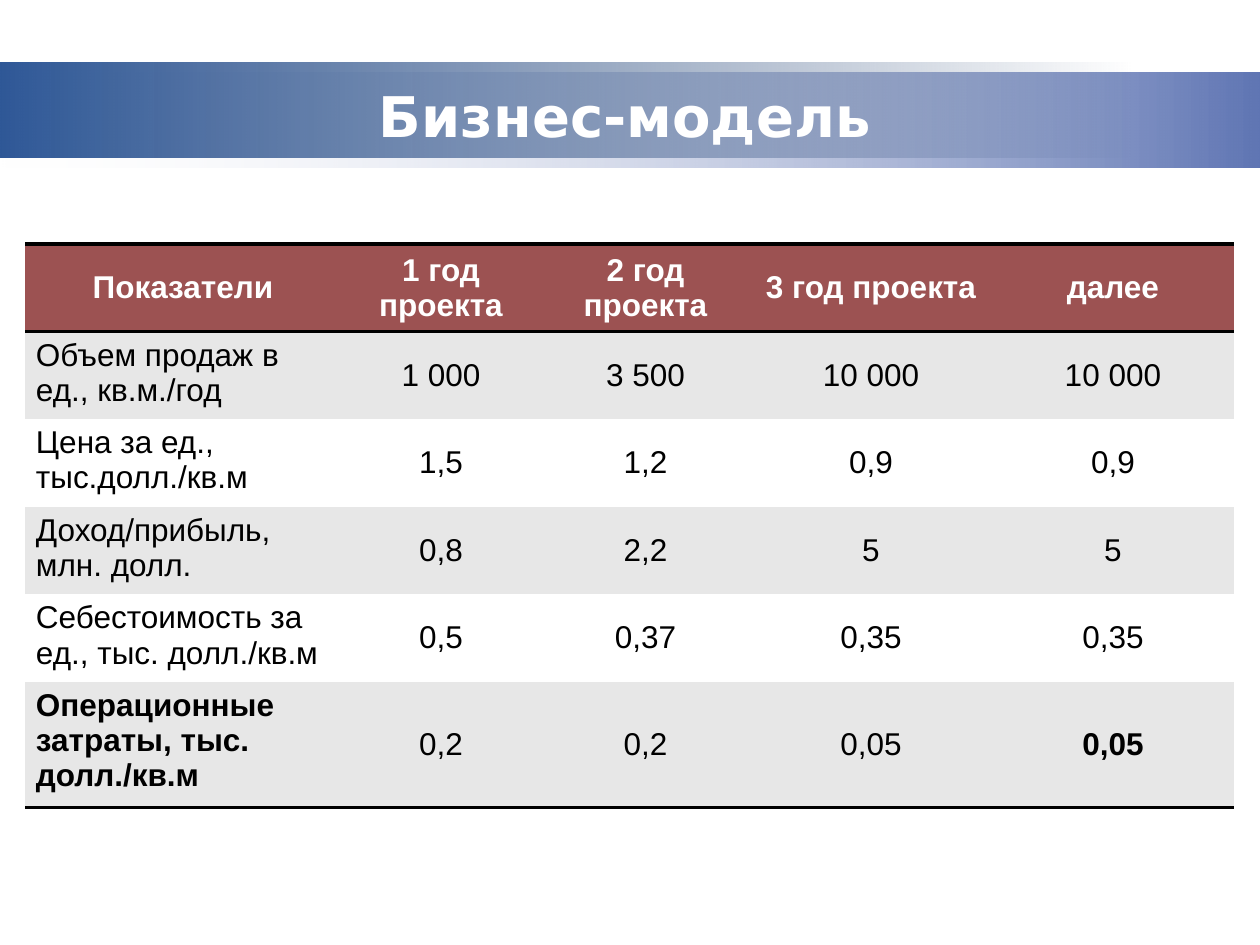
from lxml.etree import SubElement
from pptx import Presentation
from pptx.dml.color import RGBColor
from pptx.enum.shapes import MSO_SHAPE as Shape
from pptx.enum.text import MSO_ANCHOR as Anchor, PP_ALIGN as Align
from pptx.oxml import parse_xml
from pptx.oxml.ns import nsdecls, qn
from pptx.util import Pt

PX = 914400 // 126
WHITE = RGBColor(0xFF, 0xFF, 0xFF)
BLACK = RGBColor(0x00, 0x00, 0x00)
PALE = RGBColor(0xF2, 0xF3, 0xF7)
LILAC = RGBColor(0x60, 0x76, 0xB4)
BLUE = RGBColor(0x2F, 0x58, 0x97)
NAVY = RGBColor(0x22, 0x3F, 0x6C)
BRICK = RGBColor(0x9C, 0x52, 0x52)
GREY = RGBColor(0xE7, 0xE7, 0xE7)
NO_STYLE = "{2D5ABB26-0587-4C30-8999-92F81FD0307C}"


def write(para, text, align, **font):
    para.alignment = align
    span = para.add_run()
    span.text = text
    color = font.pop("color")
    for name, value in font.items():
        setattr(span.font, name, value)
    span.font.color.rgb = color


def add_rule(cell, side):
    cell._tc.get_or_add_tcPr().insert(0, parse_xml(
        f'<a:{side} {nsdecls("a")} w="{Pt(2)}"><a:solidFill>'
        f'<a:srgbClr val="{BLACK}"/></a:solidFill></a:{side}>'))


deck = Presentation()
deck.slide_width, deck.slide_height = 1260 * PX, 945 * PX
page = deck.slides.add_slide(deck.slide_layouts[6])

# Title bands: each fades to transparent at one end
bands = [(73, 1260, PALE, LILAC, 0), (63, 1134, BLUE, NAVY, 1)]
for top, width, start, end, clear_stop in bands:
    band = page.shapes.add_shape(Shape.RECTANGLE, 0, top * PX, width * PX, 95 * PX)
    band.shadow.inherit = False
    band.line.fill.background()
    band.fill.gradient()
    band.fill.gradient_angle = 0
    stops = band.fill.gradient_stops
    for stop, color, position in zip(stops, (start, end), (0, 1)):
        stop.color.rgb = color
        stop.position = position
    clear_color = stops[clear_stop]._gs.find(qn("a:srgbClr"))
    SubElement(clear_color, qn("a:alpha"), val="0")

# Title
box = page.shapes.add_textbox(116 * PX, 76 * PX, 1018 * PX, 78 * PX)
frame = box.text_frame
frame.word_wrap = True
frame.vertical_anchor = Anchor.MIDDLE
write(frame.paragraphs[0], "Бизнес-модель", Align.CENTER,
      name="DejaVu Sans", size=Pt(32), bold=True, color=WHITE)

# Table of indicators
rows = [
    ["Показатели", "1 год проекта", "2 год проекта", "3 год проекта", "далее"],
    ["Объем продаж в ед., кв.м./год", "1 000", "3 500", "10 000", "10 000"],
    ["Цена за ед., тыс.долл./кв.м", "1,5", "1,2", "0,9", "0,9"],
    ["Доход/прибыль, млн. долл.", "0,8", "2,2", "5", "5"],
    ["Себестоимость за ед., тыс. долл./кв.м", "0,5", "0,37", "0,35", "0,35"],
    ["Операционные затраты, тыс. долл./кв.м", "0,2", "0,2", "0,05", "0,05"],
]
widths = [316, 200, 209, 242, 242]
heights = [83] * 5 + [118]
last = len(rows) - 1
table = page.shapes.add_table(len(rows), len(widths), 25 * PX, 244 * PX,
                              sum(widths) * PX, sum(heights) * PX).table
table.horz_banding = False
table._tbl.tblPr.find(qn("a:tableStyleId")).text = NO_STYLE
for column, width in zip(table.columns, widths):
    column.width = width * PX
for row, height in zip(table.rows, heights):
    row.height = height * PX

for r, texts in enumerate(rows):
    header = r == 0
    for c, text in enumerate(texts):
        cell = table.cell(r, c)
        label = c == 0 and not header
        bold = header or (r == last and c in (0, len(texts) - 1))
        cell.margin_left = cell.margin_right = 11 * PX
        cell.margin_top = cell.margin_bottom = 6 * PX
        cell.vertical_anchor = Anchor.TOP if label else Anchor.MIDDLE
        cell.fill.solid()
        cell.fill.fore_color.rgb = BRICK if header else GREY if r % 2 else WHITE
        write(cell.text_frame.paragraphs[0], text,
              Align.LEFT if label else Align.CENTER,
              name="Arial", size=Pt(18), bold=bold,
              color=WHITE if header else BLACK)
        # Rules around the header and under the last row
        if r in (0, last):
            add_rule(cell, "lnB")
        if header:
            add_rule(cell, "lnT")

deck.save("out.pptx")
